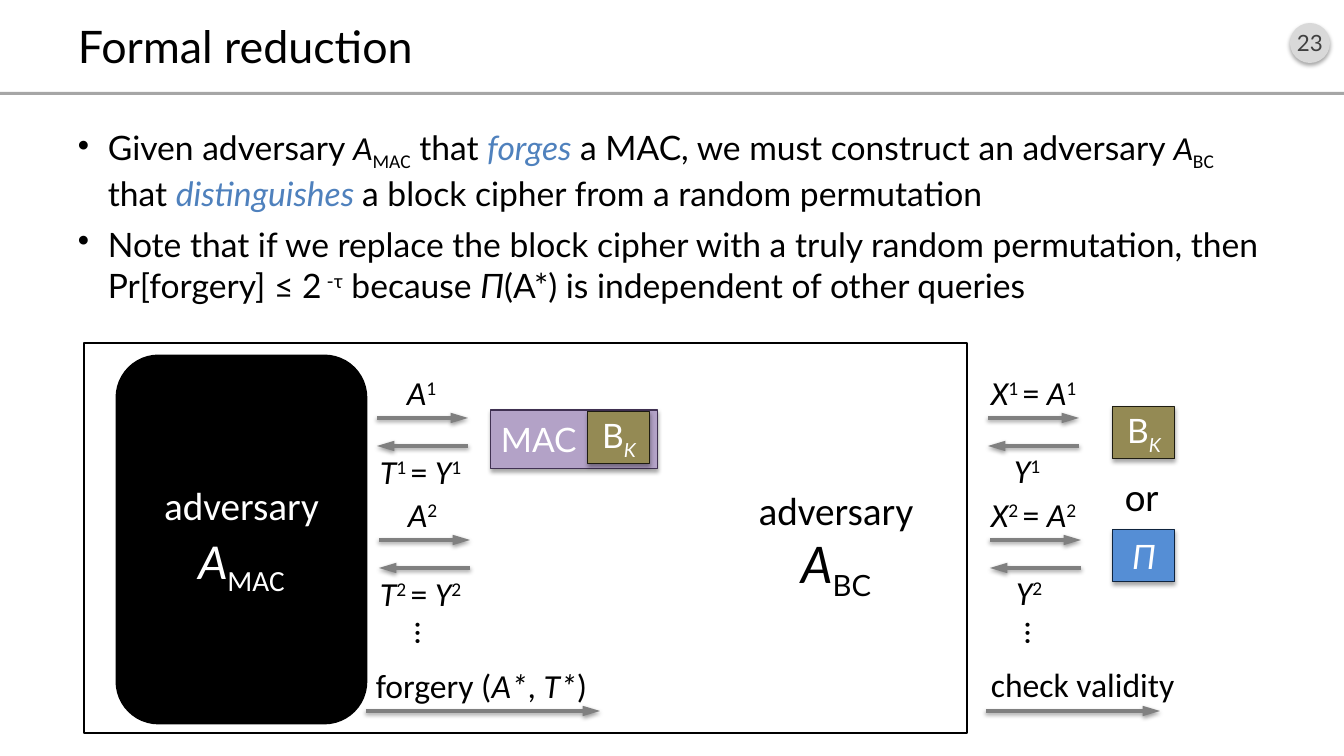
from dataclasses import dataclass

from lxml.etree import SubElement
from pptx import Presentation
from pptx.dml.color import RGBColor
from pptx.enum.shapes import MSO_CONNECTOR, MSO_SHAPE
from pptx.enum.text import MSO_ANCHOR, MSO_AUTO_SIZE, PP_ALIGN
from pptx.oxml.ns import qn
from pptx.util import Emu, Pt

SLIDE_WIDTH, SLIDE_HEIGHT = 1344, 756
EMU_PER_PX = 12192000 / SLIDE_WIDTH
SUPER, SUB = 30, -25


@dataclass(frozen=True)
class Theme:
    """Colours, fonts and type sizes of the slide."""
    black: str = "000000"
    white: str = "FFFFFF"
    accent: str = "4F81BD"
    arrow: str = "808080"
    rule: str = "A6A6A6"
    badge: str = "D9D9D9"
    badge_text: str = "404040"
    mac: str = "B3A2C7"
    mac_edge: str = "403152"
    cipher: str = "948A54"
    cipher_edge: str = "1E1C11"
    permutation: str = "558ED5"
    permutation_edge: str = "0F243E"
    main_font: str = "Lato"
    math_font: str = "Calibri"
    number_size: int = 16
    body_size: int = 24
    role_size: int = 28
    title_size: int = 32
    symbol_size: int = 36


THEME = Theme()


def px(length):
    """Turn px into EMU."""
    return Emu(round(length * EMU_PER_PX))


def span(text, **form):
    """Pair a text with its format: font, size, color, italic, baseline."""
    return text, form


def indexed(letter, mark, shift, **form):
    """Give an italic letter followed by a raised or lowered mark."""
    return [span(letter, italic=True, **form), span(mark, baseline=shift, **form)]


def equation(left, right, number):
    """Give an equation between two numbered letters."""
    return [*indexed(left, f"{number} ", SUPER), span("= "), *indexed(right, number, SUPER)]


class SlideBuilder:
    """Draws styled elements on the current slide."""

    def __init__(self, page, theme):
        """Keep the slide and its theme."""
        self.page = page
        self.theme = theme

    def add_text(self, box, paragraphs, align=PP_ALIGN.LEFT, bullet=False, **base):
        """Fill a box with paragraphs made of spans."""
        frame = box.text_frame
        for index, spans in enumerate(paragraphs):
            para = frame.paragraphs[0] if index == 0 else frame.add_paragraph()
            para.alignment = align
            if bullet:
                para.space_before = Pt(8)
                properties = para._p.get_or_add_pPr()
                properties.set("marL", str(px(30)))
                properties.set("indent", str(-px(30)))
                SubElement(properties, qn("a:buChar"), char="•")
            for text, form in spans:
                self.add_run(para, text, {**base, **form})

    def add_run(self, para, text, form):
        """Add one formatted run."""
        run = para.add_run()
        run.text = text
        font = run.font
        font.name = form.get("font", self.theme.math_font)
        font.size = Pt(form.get("size", self.theme.body_size))
        font.italic = form.get("italic", False)
        font.color.rgb = RGBColor.from_string(form.get("color", self.theme.black))
        if form.get("baseline"):
            run._r.get_or_add_rPr().set("baseline", str(form["baseline"] * 1000))

    def cast_shadow(self, effects, alpha, distance):
        """Add a soft shadow that falls straight down."""
        shadow = SubElement(effects, qn("a:outerShdw"), blurRad=str(Pt(3.1)), dist=str(Pt(distance)),
                            dir="5400000", rotWithShape="0")
        color = SubElement(shadow, qn("a:srgbClr"), val=self.theme.black)
        SubElement(color, qn("a:alpha"), val=str(alpha * 1000))

    def shape(self, kind, left, top, width, height, fill=None, edge=None, weight=0.75, shadow=False):
        """Draw a preset shape."""
        box = self.page.shapes.add_shape(kind, px(left), px(top), px(width), px(height))
        box.shadow.inherit = False
        if shadow:
            self.cast_shadow(box._element.spPr.find(qn("a:effectLst")), 35, 1.8)
        if fill:
            box.fill.solid()
            box.fill.fore_color.rgb = RGBColor.from_string(fill)
        else:
            box.fill.background()
        if edge:
            box.line.color.rgb = RGBColor.from_string(edge)
            box.line.width = Pt(weight)
        else:
            box.line.fill.background()
        box.text_frame.vertical_anchor = MSO_ANCHOR.MIDDLE
        return box

    def text(self, left, top, width, height, paragraphs, wrap=False, anchor=MSO_ANCHOR.TOP, **form):
        """Place a text box."""
        box = self.page.shapes.add_textbox(px(left), px(top), px(width), px(height))
        box.text_frame.word_wrap = wrap
        box.text_frame.auto_size = MSO_AUTO_SIZE.NONE if wrap else MSO_AUTO_SIZE.SHAPE_TO_FIT_TEXT
        box.text_frame.vertical_anchor = anchor
        self.add_text(box, paragraphs, **form)
        return box

    def label(self, left, top, width, spans):
        """Place a one-line label."""
        return self.text(left, top, width, 50, [spans])

    def dots(self, left, top):
        """Place a vertical ellipsis."""
        self.label(left, top, 45, [span("…", italic=True)]).rotation = 90

    def arrow(self, start, end, level):
        """Draw a horizontal arrow."""
        line = self.page.shapes.add_connector(MSO_CONNECTOR.STRAIGHT, px(start), px(level), px(end), px(level))
        line.line.color.rgb = RGBColor.from_string(self.theme.arrow)
        line.line.width = Pt(2.5)
        SubElement(line.line._get_or_add_ln(), qn("a:tailEnd"), type="triangle", w="med", len="lg")
        self.cast_shadow(SubElement(line._element.spPr, qn("a:effectLst")), 38, 1.6)

    def exchange(self, left, top):
        """Draw a query arrow above its reply arrow."""
        self.arrow(left, left + 91, top)
        self.arrow(left + 91, left, top + 28)

    def tile(self, left, top, spans, fill, edge):
        """Draw a small primitive tile."""
        box = self.shape(MSO_SHAPE.RECTANGLE, left, top, 62, 52, fill, edge, shadow=True)
        self.add_text(box, [spans], align=PP_ALIGN.CENTER, font=self.theme.main_font, color=self.theme.white)


def draw_header(slide):
    """Draw the title, rule and slide number."""
    badge = slide.shape(MSO_SHAPE.OVAL, 1290, 23, 40, 40, THEME.badge, shadow=True)
    badge.text_frame.margin_left = badge.text_frame.margin_right = 0
    slide.add_text(badge, [[span("23")]], align=PP_ALIGN.CENTER, font=THEME.main_font,
                   size=THEME.number_size, color=THEME.badge_text)
    slide.shape(MSO_SHAPE.RECTANGLE, 0, 92, SLIDE_WIDTH, 3, THEME.rule)
    slide.text(68, 16, 1210, 60, [[span("Formal reduction")]], wrap=True, anchor=MSO_ANCHOR.MIDDLE,
               font=THEME.main_font, size=THEME.title_size)


def draw_body(slide):
    """Add the two bullets."""
    key = {"italic": True, "color": THEME.accent}
    goal = [
        span("Given adversary "), *indexed("A", "MAC", SUB, font=THEME.math_font),
        span(" that "), span("forges", **key), span(" a MAC, we must construct an adversary "),
        *indexed("A", "BC", SUB, font=THEME.math_font),
        span(" that "), span("distinguishes ", **key),
        span("a block cipher from a random permutation"),
    ]
    note = [
        span("Note that if we replace the block cipher with a truly random permutation, then Pr[forgery] ≤ 2"),
        span(" -τ", baseline=SUPER), span(" because "), span("Π", italic=True),
        span("(A*) is independent of other queries"),
    ]
    slide.text(68, 122, 1210, 580, [goal, note], wrap=True, bullet=True, font=THEME.main_font)


def draw_reduction(slide):
    """Draw both adversaries, their queries and the oracles."""
    forger = slide.shape(MSO_SHAPE.ROUNDED_RECTANGLE, 117, 356, 249, 367, THEME.black, THEME.black, 2)
    symbol = {"size": THEME.symbol_size}
    slide.add_text(forger, [[span("adversary "), *indexed("A", "MAC", SUB, **symbol)]],
                   align=PP_ALIGN.CENTER, size=THEME.role_size, color=THEME.white)

    cipher = [span("B"), span("K", italic=True, baseline=SUB)]
    mac = slide.shape(MSO_SHAPE.RECTANGLE, 491, 410, 167, 59, THEME.mac, THEME.mac_edge, shadow=True)
    slide.add_text(mac, [[span("MAC")]], font=THEME.main_font, color=THEME.white)
    for left, top in ((588, 412), (1113, 407)):
        slide.tile(left, top, cipher, THEME.cipher, THEME.cipher_edge)
    slide.tile(1113, 530, [span("Π", italic=True)], THEME.permutation, THEME.permutation_edge)
    slide.text(1115, 467, 57, 57, [[span("or")]], size=THEME.role_size)

    for number, shift, top in (("1", 0, 418), ("2", 2, 540)):
        slide.exchange(377 + shift, top)
        slide.exchange(988 + shift, top)
        slide.label(397 + shift // 2, top - 51, 54, indexed("A", number, SUPER))
        slide.label(370, top + 28, 120, equation("T", "Y", number))
        slide.label(981, top - 51, 121, equation("X", "A", number))
        slide.label(1004 + shift, top + 27, 54, indexed("Y", number, SUPER))
    for left in (407, 1017):
        slide.dots(left, 610)

    slide.arrow(366, 600, 711)
    forgery = [span("forgery ("), span("A*", italic=True), span(", "), span("T*", italic=True), span(")")]
    slide.label(366, 660, 239, forgery)
    slide.arrow(986, 1160, 711)
    slide.label(981, 659, 229, [span("check validity")])

    slide.shape(MSO_SHAPE.RECTANGLE, 84, 343, 883, 390, edge=THEME.black, weight=2)
    role = [span("adversary", size=THEME.role_size)]
    slide.text(741, 481, 190, 119, [role, indexed("A", "BC", SUB, font=THEME.main_font, **symbol)],
               align=PP_ALIGN.CENTER)


def main():
    """Build and save the deck."""
    deck = Presentation()
    deck.slide_width, deck.slide_height = px(SLIDE_WIDTH), px(SLIDE_HEIGHT)
    slide = SlideBuilder(deck.slides.add_slide(deck.slide_layouts[6]), THEME)
    draw_header(slide)
    draw_body(slide)
    draw_reduction(slide)
    deck.save("out.pptx")


if __name__ == "__main__":
    main()
